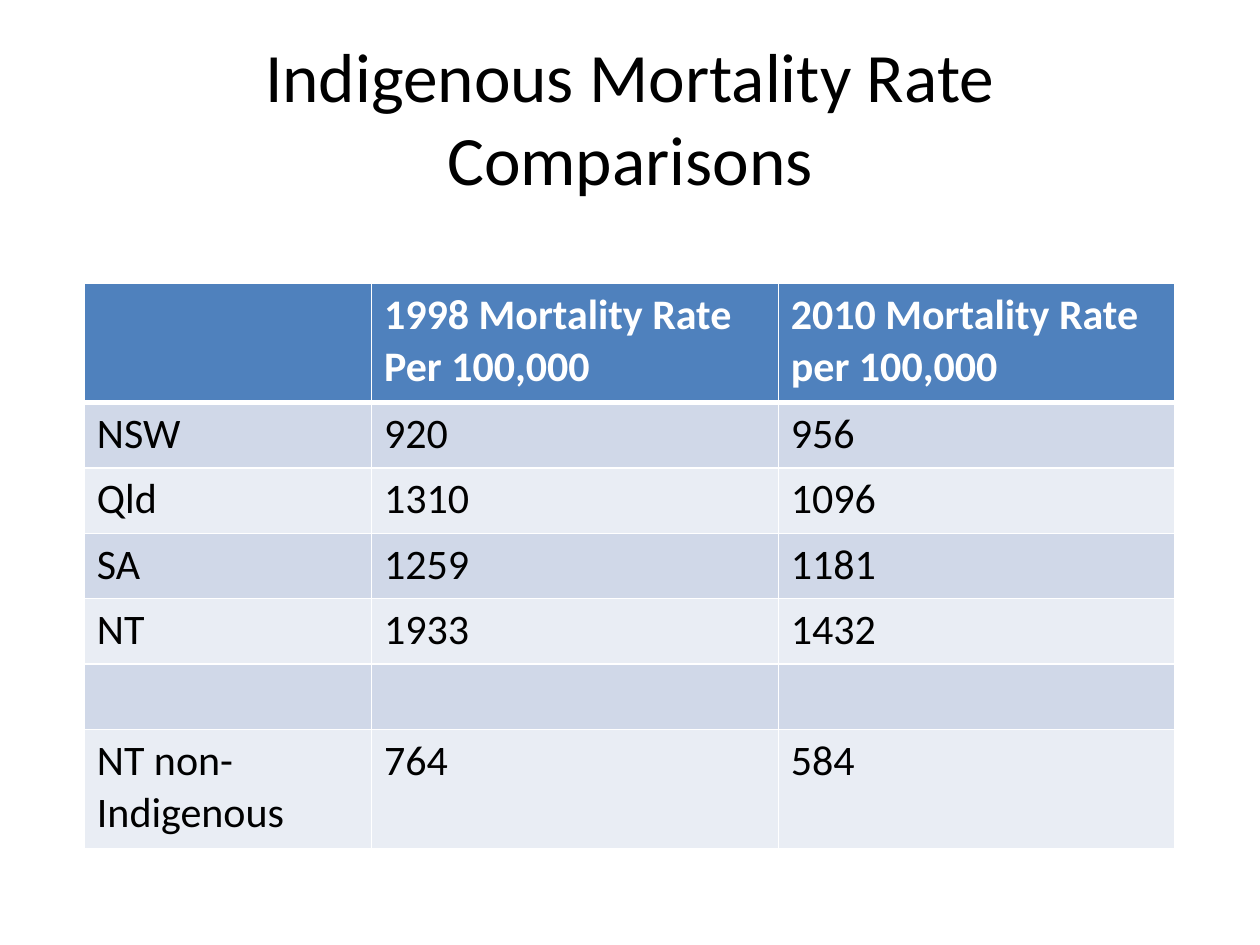
import dataclasses

import lxml.etree
import pptx
import pptx.dml.color
import pptx.enum.text
import pptx.oxml.ns
import pptx.util

Cm = pptx.util.Cm
Pt = pptx.util.Pt


@dataclasses.dataclass(frozen=True)
class Theme:
    font: str = "Calibri"
    title_size: float = 39.6
    table_size: float = 24
    text: str = "000000"
    header_text: str = "FFFFFF"
    header_fill: str = "4F81BD"
    bands: tuple = ("D0D8E8", "E9EDF4")
    border: str = "FFFFFF"
    thin: float = 1
    thick: float = 3


THEME = Theme()

ROWS = [
    ("", "1998 Mortality Rate\nPer 100,000", "2010 Mortality Rate\nper 100,000"),
    ("NSW", "920", "956"),
    ("Qld", "1310", "1096"),
    ("SA", "1259", "1181"),
    ("NT", "1933", "1432"),
    ("", "", ""),
    ("NT non-Indigenous", "764", "584"),
]
COLUMN_WIDTHS = (5.79, 8.2, 8.0)
TALL_ROW, SHORT_ROW = 2.39, 1.32
ROW_HEIGHTS = (TALL_ROW, *[SHORT_ROW] * 5, TALL_ROW)


def style_text(text_frame, size, color, bold=False, alignment=None):
    for paragraph in text_frame.paragraphs:
        paragraph.alignment = alignment
        font = paragraph.font
        font.name = THEME.font
        font.size = Pt(size)
        font.bold = bold
        font.color.rgb = pptx.dml.color.RGBColor.from_string(color)


def add_title(slide, text):
    shape = slide.shapes.add_textbox(Cm(1.27), Cm(0.76), Cm(22.86), Cm(3.18))
    frame = shape.text_frame
    frame.word_wrap = True
    frame.margin_left = frame.margin_right = Cm(0.4)
    frame.vertical_anchor = pptx.enum.text.MSO_ANCHOR.MIDDLE
    frame.text = text
    style_text(frame, THEME.title_size, THEME.text,
               alignment=pptx.enum.text.PP_ALIGN.CENTER)


def set_borders(cell, top, bottom):
    """Draw the four cell borders; they come before the fill in the XML."""
    qn = pptx.oxml.ns.qn
    properties = cell._tc.get_or_add_tcPr()
    widths = {"L": THEME.thin, "R": THEME.thin, "T": top, "B": bottom}
    for position, (side, width) in enumerate(widths.items()):
        line = lxml.etree.Element(qn(f"a:ln{side}"), w=str(Pt(width)))
        fill = lxml.etree.SubElement(line, qn("a:solidFill"))
        lxml.etree.SubElement(fill, qn("a:srgbClr"), val=THEME.border)
        properties.insert(position, line)


def fill_cell(cell, text, row_index):
    header = row_index == 0
    fill = THEME.header_fill if header else THEME.bands[(row_index - 1) % 2]
    cell.text = text
    style_text(cell.text_frame, THEME.table_size,
               THEME.header_text if header else THEME.text, bold=header)
    cell.fill.solid()
    cell.fill.fore_color.rgb = pptx.dml.color.RGBColor.from_string(fill)
    # The rule under the header is shared with the first body row
    set_borders(cell,
                top=THEME.thick if row_index == 1 else THEME.thin,
                bottom=THEME.thick if header else THEME.thin)


def add_mortality_table(slide):
    table = slide.shapes.add_table(
        len(ROWS), len(COLUMN_WIDTHS), Cm(1.7), Cm(5.72),
        Cm(sum(COLUMN_WIDTHS)), Cm(sum(ROW_HEIGHTS))).table
    for column, width in zip(table.columns, COLUMN_WIDTHS):
        column.width = Cm(width)
    for row_index, (row, height) in enumerate(zip(table.rows, ROW_HEIGHTS)):
        row.height = Cm(height)
        for cell, text in zip(row.cells, ROWS[row_index]):
            fill_cell(cell, text, row_index)


def main():
    presentation = pptx.Presentation()
    presentation.slide_width = Cm(25.4)
    presentation.slide_height = Cm(19.05)
    slide = presentation.slides.add_slide(presentation.slide_layouts[6])

    # Heading
    add_title(slide, "Indigenous Mortality Rate Comparisons")

    # Rates by state and territory
    add_mortality_table(slide)

    presentation.save("out.pptx")


if __name__ == "__main__":
    main()
